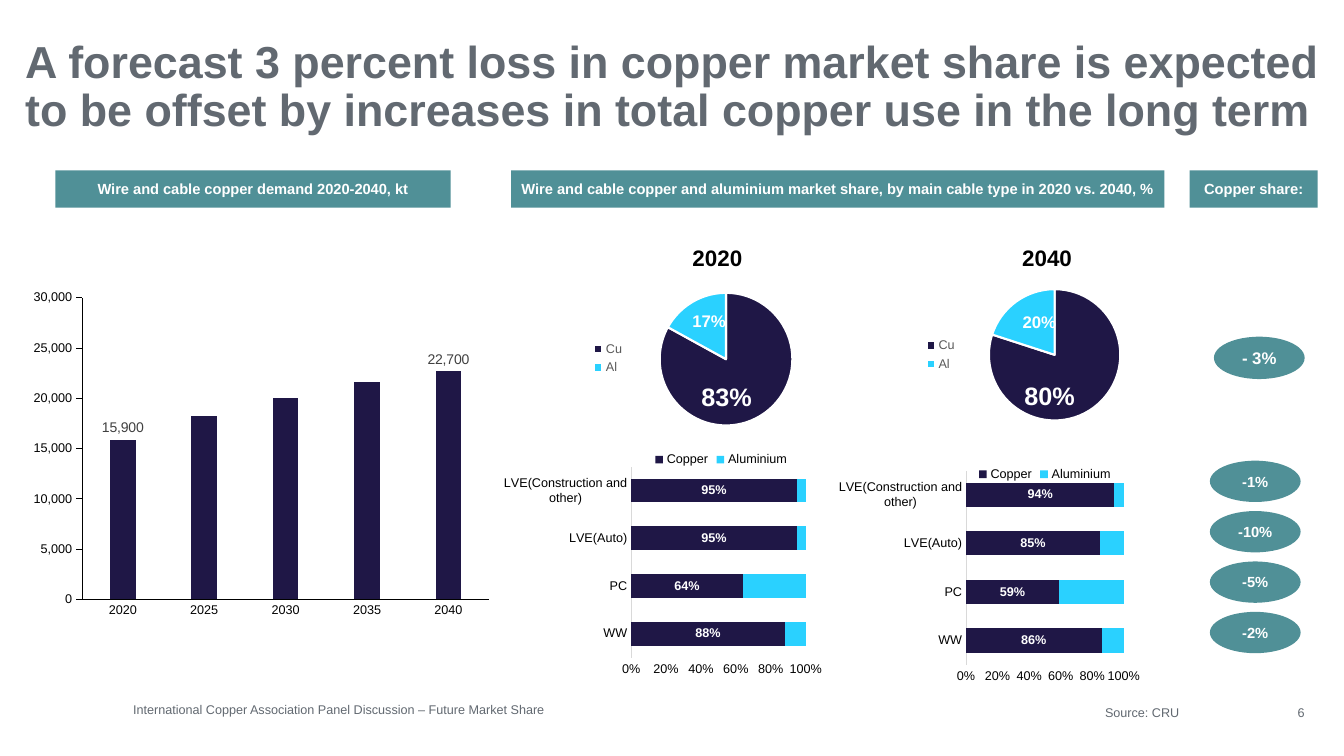
from lxml import etree
from pptx import Presentation
from pptx.chart.data import CategoryChartData
from pptx.dml.color import RGBColor
from pptx.enum.chart import XL_CHART_TYPE, XL_LABEL_POSITION, XL_LEGEND_POSITION, XL_TICK_MARK
from pptx.enum.shapes import MSO_SHAPE
from pptx.enum.text import MSO_ANCHOR, PP_ALIGN
from pptx.oxml.ns import qn
from pptx.util import Inches, Pt

FONT = "Arial"
TEAL = RGBColor(0x50, 0x90, 0x97)
NAVY = RGBColor(0x1F, 0x17, 0x46)
CYAN = RGBColor(0x2A, 0xD1, 0xFF)
SLATE = RGBColor(0x62, 0x69, 0x71)
GREY = RGBColor(0x59, 0x59, 0x59)
DARK = RGBColor(0x40, 0x40, 0x40)
PALE = RGBColor(0xD9, 0xD9, 0xD9)
BLACK = RGBColor(0, 0, 0)
WHITE = RGBColor(0xFF, 0xFF, 0xFF)

CABLES = ["WW", "PC", "LVE(Auto)", "LVE(Construction and other)"]
LOSSES = ["-1%", "-10%", "-5%", "-2%"]


def style(font, size, color, bold=False):
    font.name = FONT
    font.size = Pt(size)
    font.bold = bold
    font.color.rgb = color


def add_text(slide, text, box, size, align=PP_ALIGN.LEFT, bold=False,
             anchor=MSO_ANCHOR.BOTTOM, spacing=1.0):
    frame = slide.shapes.add_textbox(*map(Inches, box)).text_frame
    frame.word_wrap = True
    frame.vertical_anchor = anchor
    frame.margin_left = frame.margin_right = frame.margin_top = frame.margin_bottom = 0
    frame.text = text
    para = frame.paragraphs[0]
    para.alignment = align
    para.line_spacing = spacing
    style(para.runs[0].font, size, SLATE, bold)


def add_label(slide, text, box, kind=MSO_SHAPE.RECTANGLE, size=10.5, fill=TEAL, color=WHITE):
    shape = slide.shapes.add_shape(kind, *map(Inches, box))
    shape.shadow.inherit = False
    shape.fill.solid()
    shape.fill.fore_color.rgb = fill
    shape.line.fill.background()
    frame = shape.text_frame
    frame.margin_left = frame.margin_right = Inches(0.08)
    frame.margin_top = frame.margin_bottom = Inches(0.04)
    frame.vertical_anchor = MSO_ANCHOR.MIDDLE
    frame.text = text
    para = frame.paragraphs[0]
    para.alignment = PP_ALIGN.CENTER
    style(para.runs[0].font, size, color, True)


def make_layout(inner=False, **values):
    layout = etree.Element(qn("c:layout"))
    manual = etree.SubElement(layout, qn("c:manualLayout"))
    if inner:
        etree.SubElement(manual, qn("c:layoutTarget"), val="inner")
        for mode in ("xMode", "yMode"):
            etree.SubElement(manual, qn("c:" + mode), val="edge")
    for name, value in values.items():
        etree.SubElement(manual, qn("c:" + name), val=str(value))
    return layout


def add_chart(slide, kind, box, cats, series, plot, form="General"):
    data = CategoryChartData(number_format=form)
    data.categories = cats
    for name, values in series:
        data.add_series(name, values)
    chart = slide.shapes.add_chart(kind, *map(Inches, box), data).chart
    chart.has_title = False
    chart.has_legend = False
    style(chart.font, 10, BLACK)
    area = chart.element.xpath("//c:plotArea")[0]
    for old in area.findall(qn("c:layout")):
        area.remove(old)
    x, y, w, h = plot
    area.insert(0, make_layout(True, x=x, y=y, w=w, h=h))
    return chart


def place_legend(chart, side, x, y, color):
    chart.has_legend = True
    legend = chart.legend
    legend.position = side
    legend.include_in_layout = False
    style(legend.font, 9, color)
    node = chart.element.xpath("//c:legend")[0]
    for old in node.findall(qn("c:layout")):
        node.remove(old)
    layout = make_layout(x=x, y=y)
    for mode in ("yMode", "xMode"):
        layout[0].insert(0, etree.Element(qn("c:" + mode), val="edge"))
    node.find(qn("c:legendPos")).addnext(layout)


def paint(target, color):
    target.format.fill.solid()
    target.format.fill.fore_color.rgb = color


def set_axes(chart, top, step, form, tick, base, side):
    """Style both axes; side is the value axis line colour, or None for no line."""
    for axis, color in ((chart.category_axis, base), (chart.value_axis, side)):
        axis.has_major_gridlines = False
        axis.major_tick_mark = axis.minor_tick_mark = XL_TICK_MARK.NONE
        style(axis.tick_labels.font, 9, BLACK)
        if color is None:
            axis.format.line.fill.background()
        else:
            axis.format.line.color.rgb = color
            axis.format.line.width = Pt(0.75)
    value = chart.value_axis
    value.major_tick_mark = tick
    value.minimum_scale, value.maximum_scale, value.major_unit = 0, top, step
    value.tick_labels.number_format = form
    value.tick_labels.number_format_is_linked = False


def add_demand(slide):
    chart = add_chart(slide, XL_CHART_TYPE.COLUMN_CLUSTERED, (0.21, 2.73, 4.8, 3.62),
                      ["2020", "2025", "2030", "2035", "2040"],
                      [("Series 1", [15900, 18200, 20000, 21600, 22700])],
                      (0.126, 0.062, 0.841, 0.827), "#,##0")
    set_axes(chart, 30000, 5000, "#,##0", XL_TICK_MARK.OUTSIDE, BLACK, BLACK)
    plot = chart.plots[0]
    plot.vary_by_categories = False
    plot.gap_width, plot.overlap = 219, -27
    bars = plot.series[0]
    paint(bars, NAVY)
    bars.data_labels.show_value = False
    for i in (0, 4):
        label = bars.points[i].data_label
        style(label.font, 10, DARK)
        label.position = XL_LABEL_POSITION.OUTSIDE_END


def add_share(slide, box, copper, plot_box, legend_at):
    metal = [round(1 - share, 2) for share in copper]
    chart = add_chart(slide, XL_CHART_TYPE.BAR_STACKED, box, CABLES,
                      [("Copper", copper), ("Aluminium", metal)], plot_box, "0%")
    set_axes(chart, 1, 0.2, "0%", XL_TICK_MARK.NONE, PALE, None)
    place_legend(chart, XL_LEGEND_POSITION.TOP, *legend_at, BLACK)
    plot = chart.plots[0]
    plot.gap_width, plot.overlap = 100, 100
    for series, color in zip(plot.series, (NAVY, CYAN)):
        paint(series, color)
    labels = plot.series[0].data_labels
    labels.show_value = True
    labels.position = XL_LABEL_POSITION.CENTER
    style(labels.font, 9, WHITE, True)


def add_pie(slide, box, values, plot_box, legend_at, shifts):
    """Shifts move each percentage from the middle of its slice."""
    chart = add_chart(slide, XL_CHART_TYPE.PIE, box, ["Cu", "Al"],
                      [("Series 1", values)], plot_box)
    place_legend(chart, XL_LEGEND_POSITION.RIGHT, *legend_at, GREY)
    series = chart.plots[0].series[0]
    for i, (color, size) in enumerate(((NAVY, 18), (CYAN, 12))):
        point = series.points[i]
        paint(point, color)
        point.format.line.color.rgb = WHITE
        point.format.line.width = Pt(1.5)
        style(point.data_label.font, size, WHITE, True)
        point.data_label.position = XL_LABEL_POSITION.CENTER
    for label, (x, y) in zip(chart.element.xpath("//c:dLbl"), shifts):
        label.find(qn("c:idx")).addnext(make_layout(x=x, y=y))
        label.find(qn("c:showVal")).set("val", "0")
        label.find(qn("c:showPercent")).set("val", "1")


def main():
    deck = Presentation()
    deck.slide_width, deck.slide_height = Inches(13.33), Inches(7.5)
    slide = deck.slides.add_slide(deck.slide_layouts[6])
    add_text(slide, "A forecast 3 percent loss in copper market share is expected to be offset "
             "by increases in total copper use in the long term", (0.25, 0.39, 12.94, 1.17), 32,
             bold=True, anchor=MSO_ANCHOR.TOP, spacing=0.9)
    for text, left, width in (
            ("Wire and cable copper demand 2020-2040, kt", 0.55, 3.92),
            ("Wire and cable copper and aluminium market share, "
             "by main cable type in 2020 vs. 2040, %", 5.07, 6.48),
            ("Copper share:", 11.8, 1.27)):
        add_label(slide, text, (left, 1.69, width, 0.37))

    add_demand(slide)
    add_share(slide, (4.96, 4.42, 3.26, 2.69), [0.88, 0.64, 0.95, 0.95],
              (0.399, 0.078, 0.531, 0.704), (0.46, 0.01))
    add_share(slide, (8.17, 4.57, 3.26, 2.28), [0.86, 0.59, 0.85, 0.94],
              (0.433, 0.043, 0.48, 0.845), (0.46, 0.01))
    add_pie(slide, (8.47, 2.7, 4.02, 1.71), [80, 20], (0.298, 0.099, 0.394, 0.762),
            (0.17, 0.36), ((-0.06, 0.09), (0.01, -0.03)))
    add_pie(slide, (4.93, 2.75, 4.02, 1.71), [83, 17], (0.366, 0.091, 0.398, 0.77),
            (0.23, 0.35), ((-0.04, 0.06), (0, -0.05)))
    for year, left in (("2020", 6.48), ("2040", 9.75)):
        add_label(slide, year, (left, 2.37, 1.27, 0.37), size=16, fill=WHITE, color=BLACK)

    add_label(slide, "- 3%", (12.04, 3.34, 0.9, 0.42), MSO_SHAPE.OVAL, 12)
    for i, loss in enumerate(LOSSES):
        add_label(slide, loss, (12, 4.57 + 0.5 * i, 0.9, 0.41), MSO_SHAPE.OVAL)

    add_text(slide, "International Copper Association Panel Discussion – Future Market Share",
             (1.32, 6.91, 8.86, 0.2), 9)
    add_text(slide, "Source: CRU", (10.96, 6.98, 1.51, 0.16), 9)
    add_text(slide, "6", (12.65, 6.94, 0.29, 0.2), 9, PP_ALIGN.RIGHT)
    deck.save("out.pptx")


if __name__ == "__main__":
    main()
